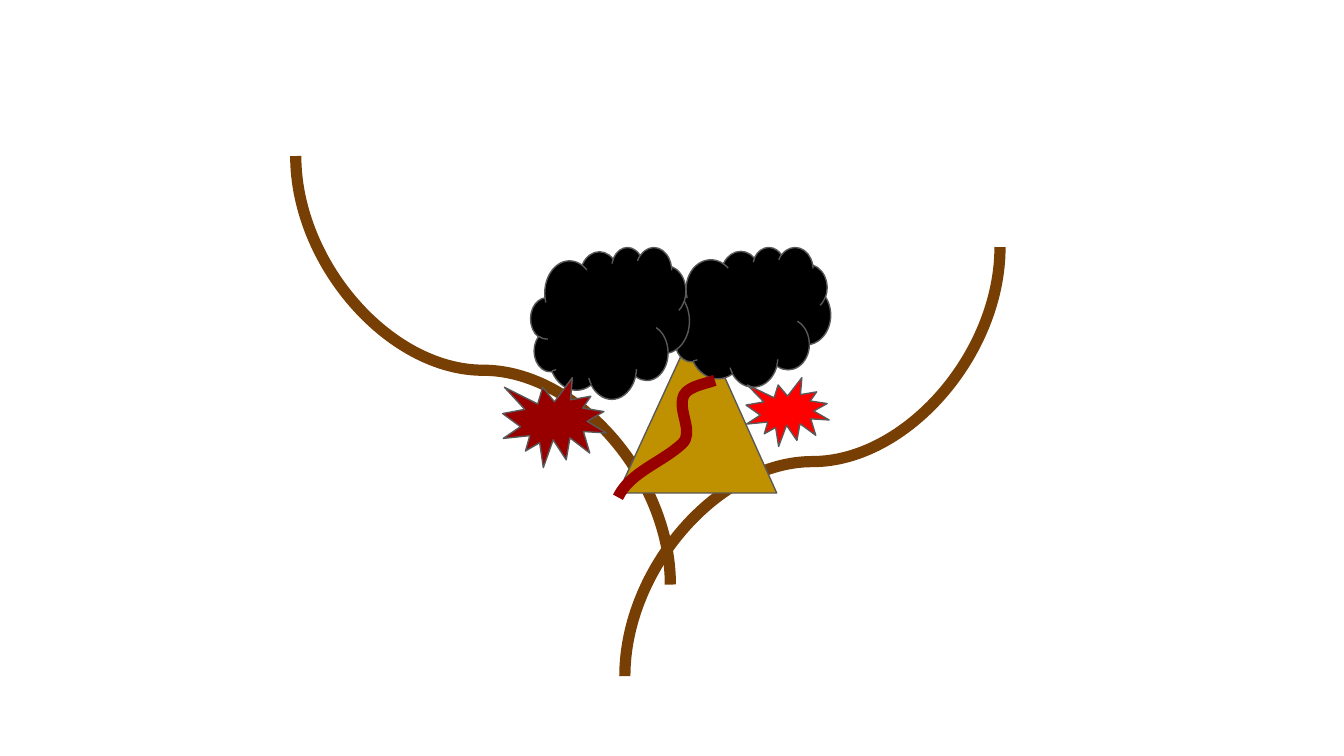
from lxml import etree
from pptx import Presentation
from pptx.dml.color import RGBColor
from pptx.enum import shapes as kinds
from pptx.oxml import ns
from pptx.util import Cm, Pt

BROWN, GOLD, BLACK = "783F04", "BF9000", "000000"
RED, DARK_RED, GREY = "FF0000", "980000", "595959"
PRESET = kinds.MSO_SHAPE


def colour(hex_value):
    return RGBColor.from_string(hex_value)


def set_line(part, hex_value, width):
    part.line.color.rgb = colour(hex_value)
    part.line.width = Pt(width)


def add_branch(slide, start, end):
    """S-curve that leaves and arrives vertically: a connector turned 270 degrees."""
    mid_x, mid_y = (start[0] + end[0]) / 2, (start[1] + end[1]) / 2
    dx, dy = start[0] - mid_x, start[1] - mid_y
    branch = slide.shapes.add_connector(
        kinds.MSO_CONNECTOR.CURVE,
        Cm(mid_x - dy), Cm(mid_y + dx), Cm(mid_x + dy), Cm(mid_y - dx))
    set_line(branch, BROWN, 6)
    properties = branch._element.spPr
    properties.find(ns.qn("a:xfrm")).set("rot", str(270 * 60000))
    etree.SubElement(properties, ns.qn("a:effectLst"))


def add_outlined(slide, preset, box, fill):
    part = slide.shapes.add_shape(preset, *map(Cm, box))
    part.shadow.inherit = False
    part.fill.solid()
    part.fill.fore_color.rgb = colour(fill)
    set_line(part, GREY, 0.75)
    return part


def add_ribbon(slide, left, top):
    """Open curve of three Bezier segments, placed from its top left corner."""
    offsets = [(1.83, 0),
               (1.6, 0.08), (1.24, 0.13), (1.22, 0.36),
               (1.17, 0.64), (1.42, 0.99), (1.22, 1.19),
               (0.84, 1.55), (0.23, 1.73), (0, 2.21)]
    points = [(Cm(left + x), Cm(top + y)) for x, y in offsets]
    builder = slide.shapes.build_freeform(*points[0])
    builder.add_line_segments(points[1:], close=False)
    ribbon = builder.convert_to_shape()
    ribbon.shadow.inherit = False
    ribbon.fill.background()
    set_line(ribbon, DARK_RED, 6)

    # Turn each three straight steps into one cubic curve
    outline = next(ribbon._element.iter(ns.qn("a:path")))
    steps = outline.findall(ns.qn("a:lnTo"))
    for first in range(0, len(steps), 3):
        curve = etree.SubElement(outline, ns.qn("a:cubicBezTo"))
        for step in steps[first:first + 3]:
            curve.append(step[0])
            outline.remove(step)


def add_figure(slide, left, top):
    # Crossing branches
    add_branch(slide, (left, top), (left + 7.08, top + 8.1))
    add_branch(slide, (left + 6.22, top + 9.83), (left + 13.31, top + 1.72))

    # Triangle, clouds and bursts, from back to front
    triangle = add_outlined(
        slide, PRESET.ISOSCELES_TRIANGLE, (left + 6.09, top + 3.07, 3, 3.3), GOLD)
    triangle.adjustments[0] = 0.506
    for x, height in ((7.11, 2.64), (4.44, 2.87)):
        add_outlined(slide, PRESET.CLOUD, (left + x, top + 1.72, 3, height), BLACK)
    for x, width, height, fill in ((8.51, 1.57, 1.3, RED), (3.91, 1.96, 1.7, DARK_RED)):
        add_outlined(slide, PRESET.EXPLOSION1,
                     (left + x, top + 4.19, width, height), fill)

    # Ribbon across the triangle
    add_ribbon(slide, left + 6.09, top + 4.24)


def main():
    deck = Presentation()
    deck.slide_width, deck.slide_height = Cm(25.4), Cm(14.29)
    slide = deck.slides.add_slide(deck.slide_layouts[6])
    add_figure(slide, 5.59, 2.95)
    deck.save("out.pptx")


if __name__ == "__main__":
    main()
